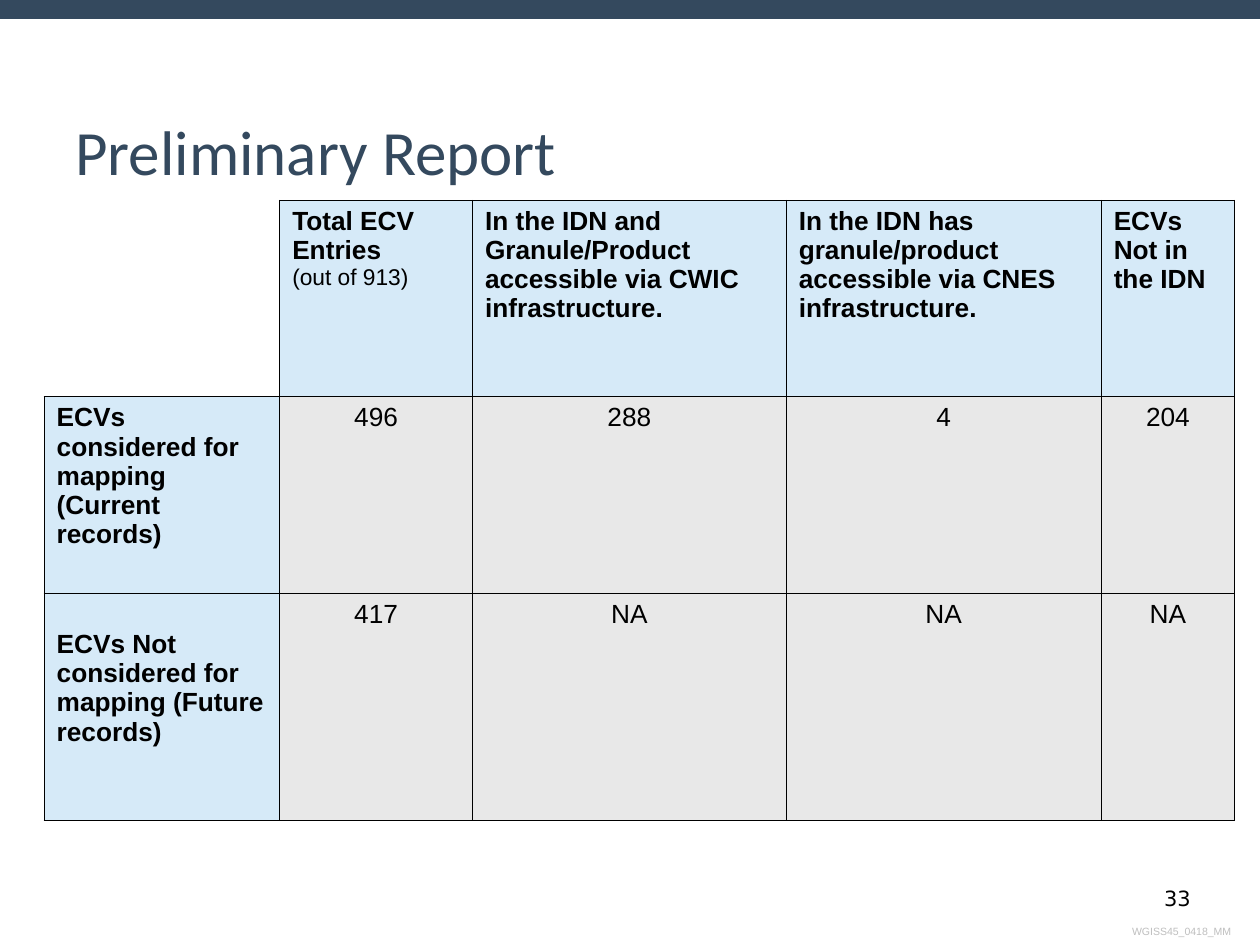
from dataclasses import dataclass

from lxml import etree
from pptx import Presentation
from pptx.dml.color import RGBColor
from pptx.enum.shapes import MSO_SHAPE
from pptx.enum.text import MSO_ANCHOR, PP_ALIGN
from pptx.oxml.ns import qn
from pptx.util import Inches, Pt

LEFT, CENTER, RIGHT = PP_ALIGN.LEFT, PP_ALIGN.CENTER, PP_ALIGN.RIGHT
TOP, BOTTOM = MSO_ANCHOR.TOP, MSO_ANCHOR.BOTTOM

COLORS = {"navy": "34495E", "header": "D6EAF8", "value": "E8E8E8",
          "ink": "000000", "footer": "BFBFBF"}
WIDTH, HEIGHT = 10, 7.5
TABLE_LEFT, TABLE_TOP = 0.35, 1.59
COLUMNS = [1.87, 1.53, 2.49, 2.5, 1.06]
ROWS = [1.56, 1.56, 1.8]
CELLS = [
    ["", "Total ECV Entries\n(out of 913)",
     "In the IDN and Granule/Product accessible via CWIC infrastructure.",
     "In the IDN has granule/product accessible via CNES infrastructure.",
     "ECVs Not in the IDN"],
    ["ECVs considered for mapping (Current records)", "496", "288", "4", "204"],
    ["ECVs Not considered for mapping (Future records)", "417", "NA", "NA", "NA"],
]
FUTURE_ROW = 2


@dataclass
class Label:
    text: str
    left: float
    top: float
    width: float
    height: float
    font: str
    size: float
    color: str
    align: PP_ALIGN = LEFT
    anchor: MSO_ANCHOR = TOP
    inset_y: float = 0.05


LABELS = [
    Label("WGISS45_0418_MM", 8.73, 7.29, 1.14, 0.2, "Arial", 6, "footer", RIGHT),
    Label("33", 9.14, 6.98, 0.58, 0.3, "DejaVu Sans", 12, "ink"),
    Label("Preliminary Report", 0.5, 0.34, 9, 1.25, "Calibri", 36, "navy",
          anchor=BOTTOM, inset_y=0.1),
]


def rgb(name: str) -> RGBColor:
    return RGBColor.from_string(COLORS[name])


def style_paragraph(p, font: str, size: float, color: str,
                    align: PP_ALIGN = LEFT, bold: bool = False) -> None:
    p.alignment = align
    for r in p.runs:
        r.font.name, r.font.size, r.font.bold = font, Pt(size), bold
        r.font.color.rgb = rgb(color)


def add_label(s, label: Label) -> None:
    box = s.shapes.add_textbox(Inches(label.left), Inches(label.top),
                               Inches(label.width), Inches(label.height))
    tf = box.text_frame
    tf.word_wrap = True
    tf.vertical_anchor = label.anchor
    tf.margin_top = tf.margin_bottom = Inches(label.inset_y)
    tf.text = label.text
    style_paragraph(tf.paragraphs[0], label.font, label.size, label.color, label.align)


def add_borders(cell, sides: str) -> None:
    """Draw a thin line on each side named in sides (L, R, T, B), none on the rest."""
    tc_pr = cell._tc.get_or_add_tcPr()
    for side in "LRTB":
        ln = etree.SubElement(tc_pr, qn(f"a:ln{side}"), w=str(Pt(0.75)))
        if side in sides:
            fill = etree.SubElement(ln, qn("a:solidFill"))
            etree.SubElement(fill, qn("a:srgbClr"), val=COLORS["ink"])
        else:
            etree.SubElement(ln, qn("a:noFill"))


def fill_cell(cell, row: int, col: int) -> None:
    text = CELLS[row][col]
    add_borders(cell, "LRTB" if text else "RB")
    if not text:
        cell.fill.background()
        return
    is_header = row == 0 or col == 0
    cell.fill.solid()
    cell.fill.fore_color.rgb = rgb("header" if is_header else "value")
    cell.text_frame.text = text
    for i, p in enumerate(cell.text_frame.paragraphs):
        style_paragraph(p, "Arial", 13 if i else 15, "ink",
                        LEFT if is_header else CENTER, is_header and i == 0)
    if row == FUTURE_ROW and col == 0:
        cell.margin_top = Inches(0.29)


def add_report_table(s) -> None:
    frame = s.shapes.add_table(len(ROWS), len(COLUMNS), Inches(TABLE_LEFT),
                               Inches(TABLE_TOP), Inches(sum(COLUMNS)), Inches(sum(ROWS)))
    table = frame.table
    table.first_row = table.horz_banding = False
    for column, width in zip(table.columns, COLUMNS):
        column.width = Inches(width)
    for row, height in enumerate(ROWS):
        table.rows[row].height = Inches(height)
        for col in range(len(COLUMNS)):
            fill_cell(table.cell(row, col), row, col)


def main() -> None:
    prs = Presentation()
    prs.slide_width, prs.slide_height = Inches(WIDTH), Inches(HEIGHT)
    s = prs.slides.add_slide(prs.slide_layouts[6])
    bar = s.shapes.add_shape(MSO_SHAPE.RECTANGLE, 0, 0, Inches(WIDTH),
                             Inches(HEIGHT * 0.02))
    bar.shadow.inherit = False
    bar.fill.solid()
    bar.fill.fore_color.rgb = rgb("navy")
    bar.line.fill.background()
    for label in LABELS:
        add_label(s, label)
    add_report_table(s)
    prs.save("out.pptx")


if __name__ == "__main__":
    main()
